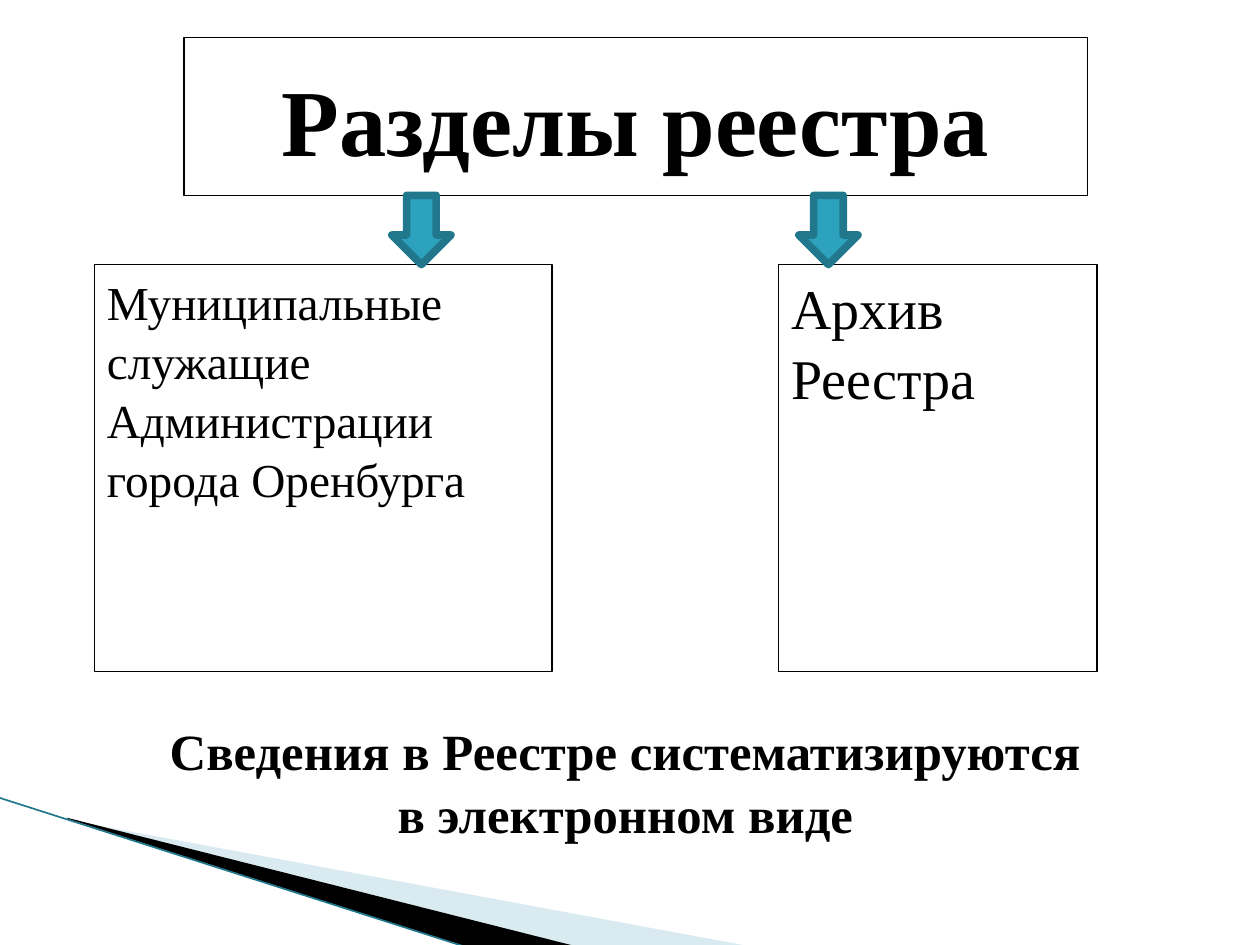
from dataclasses import dataclass

from lxml.etree import SubElement
from pptx import Presentation
from pptx.dml.color import RGBColor
from pptx.enum.shapes import MSO_CONNECTOR, MSO_SHAPE
from pptx.enum.text import MSO_ANCHOR, PP_ALIGN
from pptx.oxml.ns import qn
from pptx.util import Inches, Pt

BLACK = RGBColor(0, 0, 0)
PALE = RGBColor(0xA0, 0xCB, 0xDC)
TEAL = RGBColor(0x2D, 0xA2, 0xBF)
DARK_TEAL = RGBColor(0x21, 0x78, 0x8D)
FONT = "Times New Roman"


@dataclass
class Box:
    text: str
    left: float
    top: float
    width: float
    height: float
    size: float
    border: float = 0
    bold: bool = False
    align: PP_ALIGN = PP_ALIGN.LEFT
    anchor: MSO_ANCHOR = MSO_ANCHOR.TOP


SECTION_TOP, SECTION_HEIGHT = 2.1, 3.23
BOXES = [
    Box("Муниципальные служащие Администрации города Оренбурга",
        0.75, SECTION_TOP, 3.63, SECTION_HEIGHT, 27, border=1),
    Box("Разделы реестра", 1.46, 0.3, 7.17, 1.25, 54, border=0.75, bold=True,
        align=PP_ALIGN.CENTER, anchor=MSO_ANCHOR.MIDDLE),
    Box("Архив Реестра", 6.18, SECTION_TOP, 2.53, SECTION_HEIGHT, 32, border=1),
    Box("Сведения в Реестре систематизируются в электронном виде",
        1.14, 5.64, 7.65, 1.08, 29, bold=True, align=PP_ALIGN.CENTER),
]
ARROW_LEFTS = (3.11, 6.34)


def write(tf, text: str, *, size: float, bold: bool, align: PP_ALIGN) -> None:
    p = tf.paragraphs[0]
    p.alignment = align
    p.line_spacing = 1.04
    r = p.add_run()
    r.text = text
    r.font.name, r.font.size, r.font.bold = FONT, Pt(size), bold
    r.font.color.rgb = BLACK


def add_box(s, box: Box) -> None:
    place = [Inches(v) for v in (box.left, box.top, box.width, box.height)]
    if box.border:
        sp = s.shapes.add_shape(MSO_SHAPE.RECTANGLE, *place)
        sp.shadow.inherit = False
        sp.fill.background()
        sp.line.color.rgb = BLACK
        sp.line.width = Pt(box.border)
    else:
        sp = s.shapes.add_textbox(*place)
    tf = sp.text_frame
    tf.word_wrap = True
    tf.vertical_anchor = box.anchor
    write(tf, box.text, size=box.size, bold=box.bold, align=box.align)


def add_arrow(s, left: float) -> None:
    sp = s.shapes.add_shape(MSO_SHAPE.DOWN_ARROW, Inches(left), Inches(1.55),
                            Inches(0.47), Inches(0.55))
    sp.shadow.inherit = False
    sp.fill.solid()
    sp.fill.fore_color.rgb = TEAL
    sp.line.color.rgb = DARK_TEAL
    sp.line.width = Pt(4.33)
    SubElement(sp.line._get_or_add_ln(), qn("a:round"))


def add_wedge(s, points: list[tuple[float, float]], color: RGBColor,
              opacity: int = 100) -> None:
    """Draw a filled corner sliver; opacity is in percent."""
    corners = [(Inches(x), Inches(y)) for x, y in points]
    builder = s.shapes.build_freeform(*corners[0])
    builder.add_line_segments(corners[1:], close=True)
    sp = builder.convert_to_shape()
    sp.shadow.inherit = False
    sp.fill.solid()
    sp.fill.fore_color.rgb = color
    sp.line.fill.background()
    if opacity < 100:
        rgb = sp._element.spPr.find(".//" + qn("a:srgbClr"))
        SubElement(rgb, qn("a:alpha"), val=str(opacity * 1000))


def add_corner(s) -> None:
    add_wedge(s, [(0.55, 6.51), (5.95, 7.51), (4.56, 7.51), (0.55, 6.5)], PALE, 40)
    add_wedge(s, [(0.53, 6.49), (4.57, 7.51), (3.72, 7.52), (0.54, 6.5)], BLACK)
    edge = s.shapes.add_connector(MSO_CONNECTOR.STRAIGHT, Inches(-0.01), Inches(6.33),
                                  Inches(3.71), Inches(7.52))
    edge.line.color.rgb = DARK_TEAL
    edge.line.width = Pt(0.95)
    SubElement(edge._element.spPr, qn("a:effectLst"))


def main() -> None:
    prs = Presentation()
    prs.slide_width, prs.slide_height = Inches(10), Inches(7.5)
    s = prs.slides.add_slide(prs.slide_layouts[6])
    add_corner(s)
    for box in BOXES:
        add_box(s, box)
    for left in ARROW_LEFTS:
        add_arrow(s, left)
    prs.save("out.pptx")


if __name__ == "__main__":
    main()
